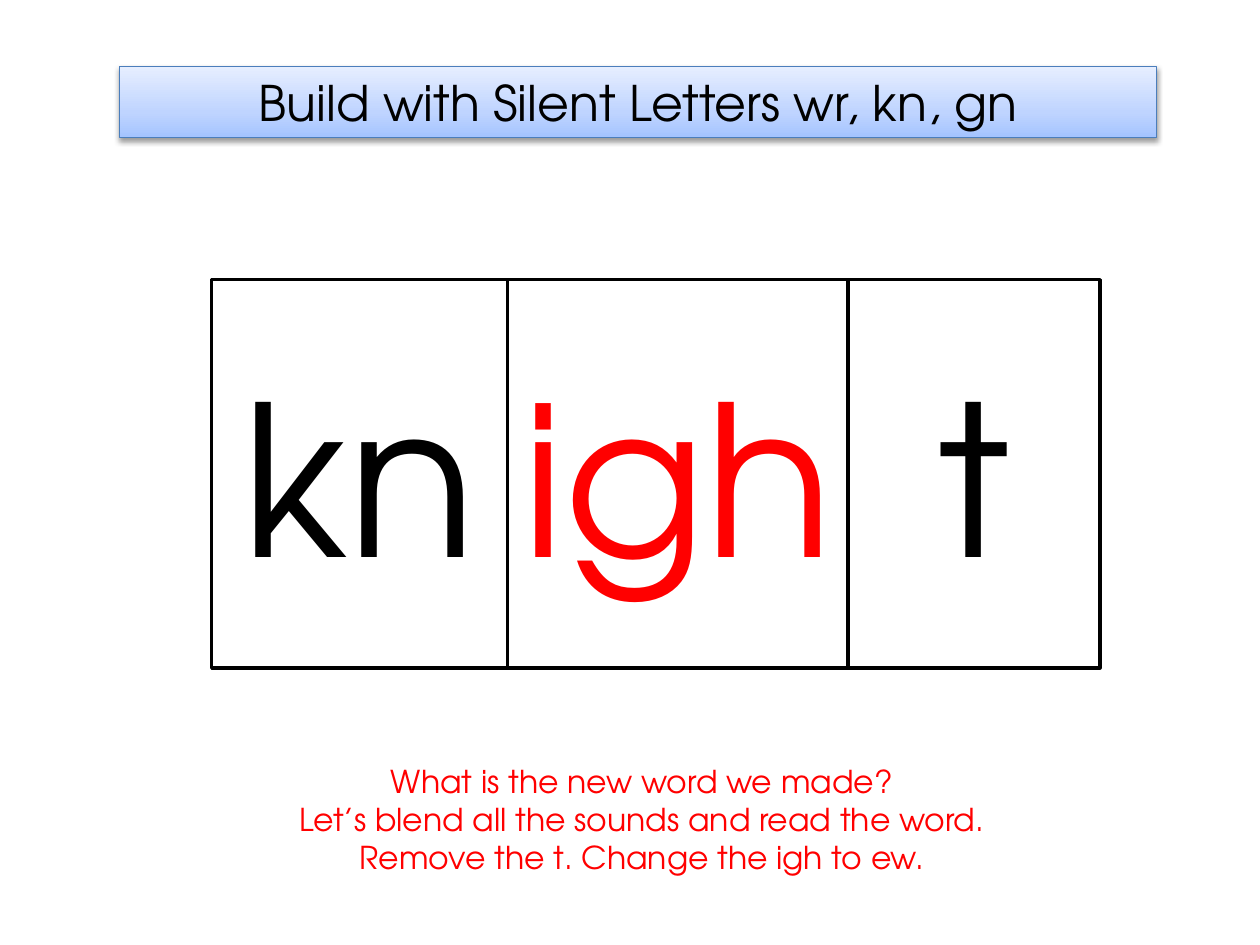
from lxml import etree
from pptx import Presentation
from pptx.dml.color import RGBColor
from pptx.enum.shapes import MSO_SHAPE
from pptx.enum.text import MSO_ANCHOR, MSO_AUTO_SIZE, PP_ALIGN
from pptx.oxml import parse_xml
from pptx.oxml.ns import nsdecls, qn
from pptx.util import Inches, Pt

RECTANGLE = MSO_SHAPE.RECTANGLE
MIDDLE = MSO_ANCHOR.MIDDLE
NO_AUTOFIT = MSO_AUTO_SIZE.NONE
GROW_SHAPE = MSO_AUTO_SIZE.SHAPE_TO_FIT_TEXT
CENTER = PP_ALIGN.CENTER
TITLE_ONLY = 5

BLACK = "000000"
WHITE = "FFFFFF"
RED = "FF0000"
TITLE_STOPS = [(0, "A4C4FF"), (35, "BFD4FF"), (100, "E6EEFF")]


def color(value):
    return RGBColor.from_string(value)


class LessonSlide:
    font = "TeX Gyre Adventor"

    def __init__(self, deck):
        self.page = deck.slides.add_slide(deck.slide_layouts[TITLE_ONLY])

    def set_text(self, shape, text, size, text_color):
        frame = shape.text_frame
        frame.text = text
        frame.word_wrap = True
        for para in frame.paragraphs:
            para.alignment = CENTER
            for span in para.runs:
                span.font.name = self.font
                span.font.size = Pt(size)
                span.font.color.rgb = color(text_color)

    def outline(self, shape, line_color, width):
        shape.line.color.rgb = color(line_color)
        shape.line.width = Pt(width)

    def title(self, text, left, top, width, height):
        banner = self.page.shapes.title
        banner.left, banner.top = Inches(left), Inches(top)
        banner.width, banner.height = Inches(width), Inches(height)
        self.set_text(banner, text, 28, BLACK)
        banner.text_frame.auto_size = NO_AUTOFIT
        banner.text_frame.vertical_anchor = MIDDLE
        self.gradient(banner, TITLE_STOPS)
        self.outline(banner, "4B7EBC", 0.75)
        self.shadow(banner)

    def gradient(self, shape, stops):
        fill = parse_xml(f'<a:gradFill {nsdecls("a")} rotWithShape="1"/>')
        stop_list = etree.SubElement(fill, qn("a:gsLst"))
        for percent, value in stops:
            stop = etree.SubElement(stop_list, qn("a:gs"), pos=str(percent * 1000))
            etree.SubElement(stop, qn("a:srgbClr"), val=value)
        etree.SubElement(fill, qn("a:lin"), ang=str(270 * 60000), scaled="0")
        shape.element.spPr.append(fill)

    def shadow(self, shape):
        shape.element.spPr.append(parse_xml(
            f'<a:effectLst {nsdecls("a")}>'
            f'<a:outerShdw blurRad="{int(Pt(3.1))}" dist="{int(Pt(1.6))}" '
            f'dir="{90 * 60000}" rotWithShape="0">'
            f'<a:srgbClr val="{BLACK}"><a:alpha val="38000"/></a:srgbClr>'
            '</a:outerShdw></a:effectLst>'))

    def letter_card(self, text, left, top, width, height, text_color):
        card = self.page.shapes.add_shape(
            RECTANGLE, Inches(left), Inches(top), Inches(width), Inches(height))
        card.shadow.inherit = False
        card.fill.solid()
        card.fill.fore_color.rgb = color(WHITE)
        self.outline(card, BLACK, 2)
        self.set_text(card, text, 120, text_color)
        card.text_frame.vertical_anchor = MIDDLE

    def instructions(self, lines, left, top, width, height):
        box = self.page.shapes.add_textbox(
            Inches(left), Inches(top), Inches(width), Inches(height))
        self.set_text(box, "\n".join(lines), 18, RED)
        box.text_frame.auto_size = GROW_SHAPE


def main():
    deck = Presentation()
    deck.slide_width, deck.slide_height = Inches(10), Inches(7.5)
    slide = LessonSlide(deck)
    slide.title("Build with Silent Letters wr, kn, gn", 0.95, 0.53, 8.23, 0.56)

    left = 1.68
    for letters, width, text_color in [
        ("kn", 2.35, BLACK), ("igh", 2.7, RED), ("t", 2, BLACK),
    ]:
        slide.letter_card(letters, left, 2.22, width, 3.08, text_color)
        left += width

    slide.instructions([
        "What is the new word we made?",
        "Let’s blend all the sounds and read the word.",
        "Remove the t. Change the igh to ew.",
    ], 1.61, 6, 6.97, 1.01)
    deck.save("out.pptx")


if __name__ == "__main__":
    main()
